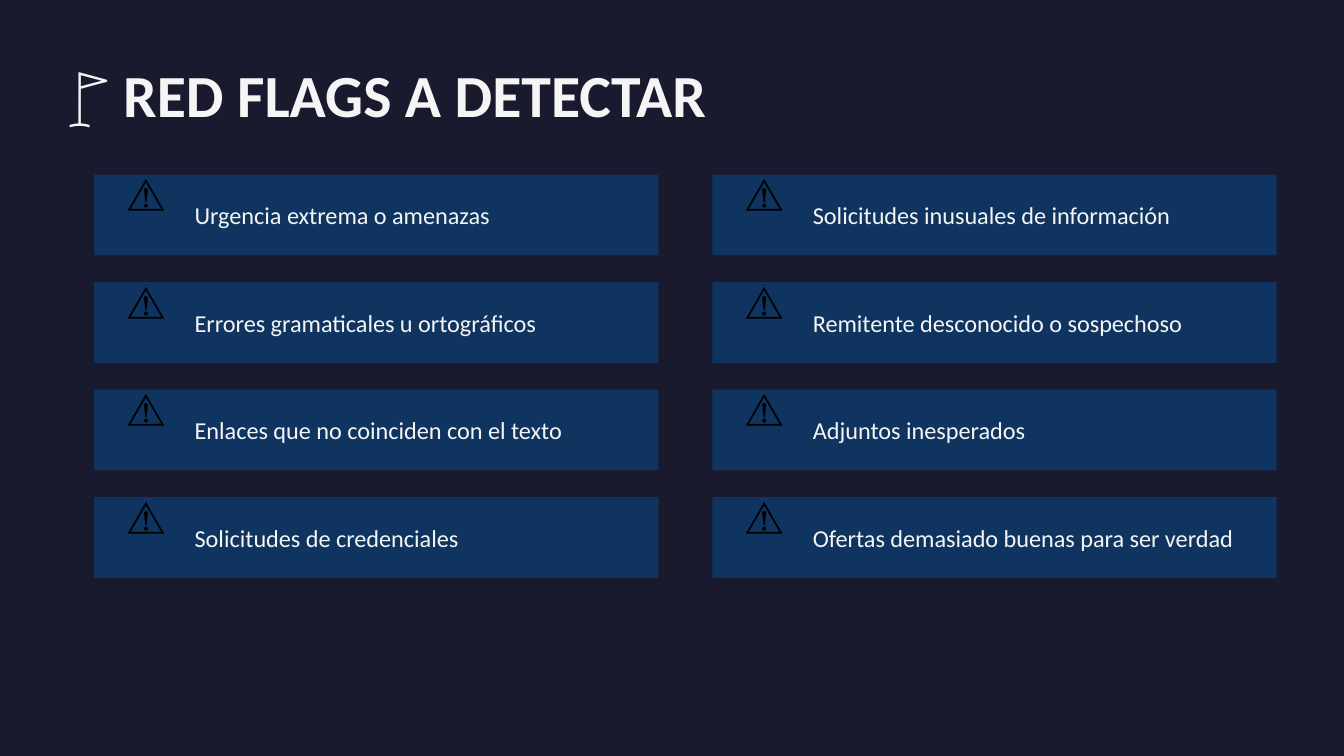
from pptx import Presentation
from pptx.dml.color import RGBColor
from pptx.enum.shapes import MSO_SHAPE
from pptx.enum.text import MSO_ANCHOR, PP_ALIGN
from pptx.util import Inches, Pt

BACKGROUND = RGBColor(0x1A, 0x1A, 0x2E)
CARD = RGBColor(0x0F, 0x34, 0x60)
LIGHT = RGBColor(0xF5, 0xF5, 0xF5)
BLACK = RGBColor(0, 0, 0)

COLUMNS = 2
FLAGS = [
    "Urgencia extrema o amenazas",
    "Solicitudes inusuales de información",
    "Errores gramaticales u ortográficos",
    "Remitente desconocido o sospechoso",
    "Enlaces que no coinciden con el texto",
    "Adjuntos inesperados",
    "Solicitudes de credenciales",
    "Ofertas demasiado buenas para ser verdad",
]


def add_text(s, text, left, top, width, height, size, color=LIGHT,
             bold=False, align=PP_ALIGN.LEFT):
    box = s.shapes.add_textbox(Inches(left), Inches(top), Inches(width), Inches(height))
    tf = box.text_frame
    tf.word_wrap = True
    tf.vertical_anchor = MSO_ANCHOR.MIDDLE
    p = tf.paragraphs[0]
    p.text = text
    p.alignment = align
    p.font.name = "Calibri"
    p.font.size = Pt(size)
    p.font.bold = bold
    p.font.color.rgb = color
    return tf


def add_title(s, text):
    tf = add_text(s, text, 0.5, 0.4, 9, 0.6, 32, bold=True)
    tf.margin_left = tf.margin_right = tf.margin_top = tf.margin_bottom = 0


def add_flag_card(s, text, left, top):
    card = s.shapes.add_shape(MSO_SHAPE.RECTANGLE, Inches(left), Inches(top),
                              Inches(4.2), Inches(0.6))
    card.shadow.inherit = False
    card.fill.solid()
    card.fill.fore_color.rgb = CARD
    card.line.fill.background()
    add_text(s, "⚠️", left + 0.15, top + 0.1, 0.4, 0.4, 20, BLACK,
             align=PP_ALIGN.CENTER)
    add_text(s, text, left + 0.65, top + 0.1, 3.4, 0.4, 13)


def main():
    prs = Presentation()
    prs.slide_width = Inches(10)
    prs.slide_height = Inches(10 * 9 / 16)
    s = prs.slides.add_slide(prs.slide_layouts[6])
    s.background.fill.solid()
    s.background.fill.fore_color.rgb = BACKGROUND

    add_title(s, "🚩 RED FLAGS A DETECTAR")
    for i, flag in enumerate(FLAGS):
        row, column = divmod(i, COLUMNS)
        add_flag_card(s, flag, 0.7 + column * 4.6, 1.3 + row * 0.8)

    prs.save("out.pptx")


if __name__ == "__main__":
    main()
